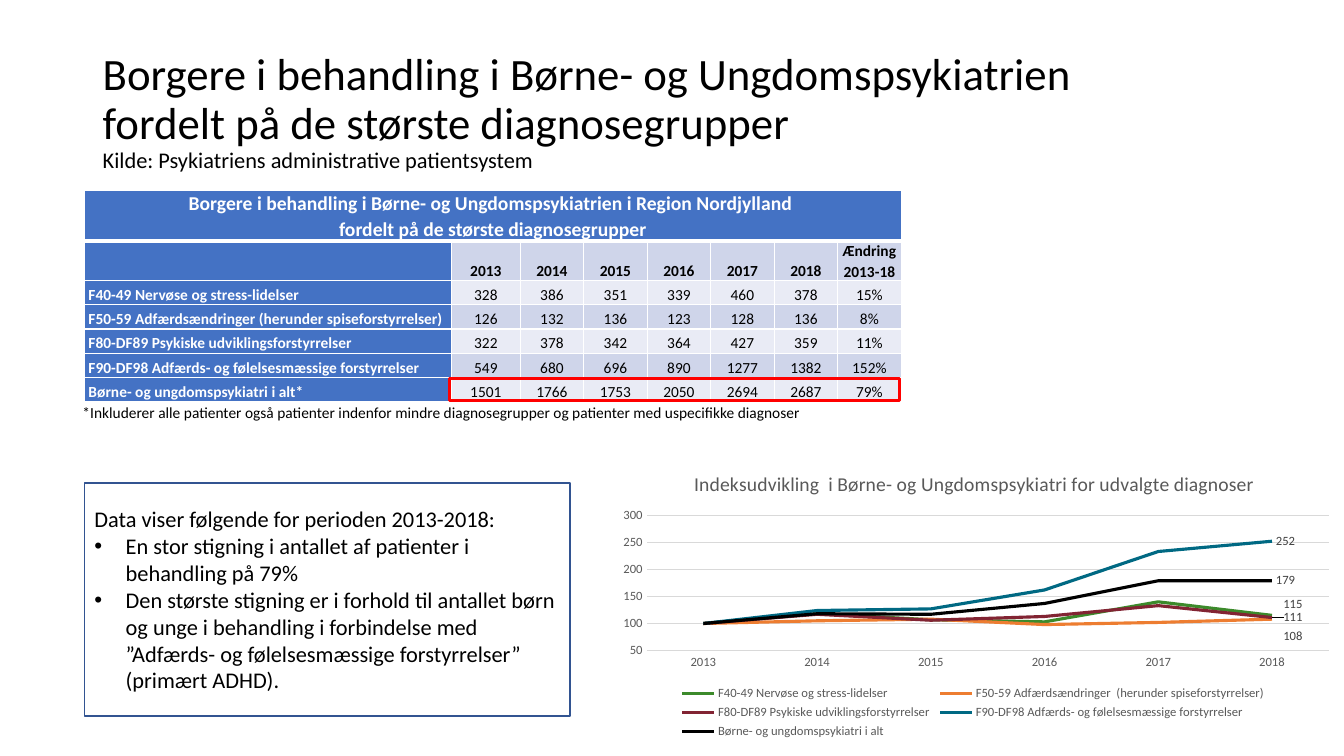
import lxml.etree
import pptx
import pptx.chart.data
import pptx.dml.color
import pptx.enum.chart
import pptx.enum.shapes
import pptx.enum.text
import pptx.oxml.ns
import pptx.util

Cm, Pt, qn = pptx.util.Cm, pptx.util.Pt, pptx.oxml.ns.qn
ALIGN, ANCHOR = pptx.enum.text.PP_ALIGN, pptx.enum.text.MSO_ANCHOR
RECT = pptx.enum.shapes.MSO_SHAPE.RECTANGLE

COLORS = {
    "black": "000000", "white": "FFFFFF", "blue": "4472C4", "frame": "325491",
    "band_dark": "CFD5EA", "band_light": "E9EBF5", "mark": "FF0000",
    "grid": "D9D9D9", "axis": "595959", "label": "404040",
}
FONT = "Calibri"

TITLE = ["Borgere i behandling i Børne- og Ungdomspsykiatrien ",
         "fordelt på de største diagnosegrupper"]
SOURCE = "Kilde: Psykiatriens administrative patientsystem"
TABLE_TITLE = ["Borgere i behandling i Børne- og Ungdomspsykiatrien i Region Nordjylland ",
               "fordelt på de største diagnosegrupper"]
YEARS = ["2013", "2014", "2015", "2016", "2017", "2018"]
CHANGE = ["Ændring ", "2013-18"]
# table label, chart label, patients per year, change, line colour, end label shift (x, y)
DIAGNOSES = [
    ("F40-49 Nervøse og stress-lidelser", "F40-49 Nervøse og stress-lidelser",
     [328, 386, 351, 339, 460, 378], "15%", "3C8A2B", (0.01, -0.04)),
    ("F50-59 Adfærdsændringer (herunder spiseforstyrrelser)",
     "F50-59 Adfærdsændringer  (herunder spiseforstyrrelser)",
     [126, 132, 136, 123, 128, 136], "8%", "ED7D31", (0.01, 0.06)),
    ("F80-DF89 Psykiske udviklingsforstyrrelser", "F80-DF89 Psykiske udviklingsforstyrrelser",
     [322, 378, 342, 364, 427, 359], "11%", "822433", (0.01, 0)),
    ("F90-DF98 Adfærds- og følelsesmæssige forstyrrelser",
     "F90-DF98 Adfærds- og følelsesmæssige forstyrrelser",
     [549, 680, 696, 890, 1277, 1382], "152%", "006983", None),
    ("Børne- og ungdomspsykiatri i alt*", "Børne- og ungdomspsykiatri i alt",
     [1501, 1766, 1753, 2050, 2694, 2687], "79%", "000000", None),
]
NOTE = ("*Inkluderer alle patienter også patienter indenfor mindre diagnosegrupper "
        "og patienter med uspecifikke diagnoser")
CHART_TITLE = "Indeksudvikling  i Børne- og Ungdomspsykiatri for udvalgte diagnoser "
FINDINGS = "Data viser følgende for perioden 2013-2018:"
BULLETS = [
    "En stor stigning i antallet af patienter i behandling på 79%",
    "Den største stigning er i forhold til antallet børn og unge i behandling i forbindelse "
    "med ”Adfærds- og følelsesmæssige forstyrrelser” (primært ADHD).",
]

COLS = [9.25, 1.73] + [1.6] * 6
ROWS = [1.27, 1.0] + [0.61] * len(DIAGNOSES)
TABLE_LEFT, TABLE_TOP = 2.13, 4.8


def rgb(name):
    return pptx.dml.color.RGBColor.from_string(COLORS.get(name, name))


def cm(*lengths):
    return [Cm(n) for n in lengths]


def set_all(obj, **values):
    for name, value in values.items():
        setattr(obj, name, value)


def style(font, size, color="black", bold=False):
    set_all(font, name=FONT, size=Pt(size), bold=bold)
    font.color.rgb = rgb(color)


def add_run(p, text, size, color="black", bold=False):
    r = p.add_run()
    r.text = text
    style(r.font, size, color, bold)


def set_line(line, color, width):
    line.color.rgb = rgb(color)
    line.width = Pt(width)


def add_text_box(slide, *box):
    tf = slide.shapes.add_textbox(*cm(*box)).text_frame
    set_all(tf, word_wrap=True, vertical_anchor=ANCHOR.MIDDLE)
    return tf


def add_frame(slide, box, color, width):
    sp = slide.shapes.add_shape(RECT, *cm(*box))
    sp.shadow.inherit = False
    sp.fill.background()
    set_line(sp.line, color, width)
    return sp


def fill_cell(cell, lines, fill, size=11, color="black", bold=False,
              align=ALIGN.CENTER, top=1, bottom=1):
    set_all(cell, vertical_anchor=ANCHOR.BOTTOM, margin_left=Cm(0.1),
            margin_right=Cm(0.1), margin_top=0, margin_bottom=0)
    tc_pr = cell._tc.get_or_add_tcPr()
    for side, width in zip("LRTB", (1, 1, top, bottom)):
        ln = lxml.etree.SubElement(tc_pr, qn("a:ln" + side), w=str(Pt(width)))
        solid = lxml.etree.SubElement(ln, qn("a:solidFill"))
        lxml.etree.SubElement(solid, qn("a:srgbClr"), val=COLORS["white"])
    cell.fill.solid()
    cell.fill.fore_color.rgb = rgb(fill)
    tf = cell.text_frame
    for i, text in enumerate(lines):
        p = tf.add_paragraph() if i else tf.paragraphs[0]
        set_all(p, alignment=align, line_spacing=1.07)
        add_run(p, text, size, color, bold)


def set_layout(parent, index, **values):
    """Place a chart part by fractions of the chart area."""
    for old in parent.findall(qn("c:layout")):
        parent.remove(old)
    layout = lxml.etree.Element(qn("c:layout"))
    manual = lxml.etree.SubElement(layout, qn("c:manualLayout"))
    for tag, value in values.items():
        lxml.etree.SubElement(manual, qn("c:" + tag), val=str(value))
    parent.insert(index, layout)


def add_table(slide):
    table = slide.shapes.add_table(len(ROWS), len(COLS), *cm(
        TABLE_LEFT, TABLE_TOP, sum(COLS), sum(ROWS))).table
    for col, width in zip(table.columns, COLS):
        col.width = Cm(width)
    for row, height in zip(table.rows, ROWS):
        row.height = Cm(height)
    table.cell(0, 0).merge(table.cell(0, len(COLS) - 1))
    fill_cell(table.cell(0, 0), TABLE_TITLE, "blue", 14, "white", True, bottom=3)
    for c, lines in enumerate([[]] + [[year] for year in YEARS] + [CHANGE]):
        fill_cell(table.cell(1, c), lines, "band_dark" if c else "blue", bold=True, top=3)
    for r, (label, _, counts, change, *_) in enumerate(DIAGNOSES, 2):
        fill_cell(table.cell(r, 0), [label], "blue", color="white", bold=True, align=ALIGN.LEFT)
        band = "band_dark" if r % 2 else "band_light"
        for c, value in enumerate(counts + [change], 1):
            fill_cell(table.cell(r, c), [str(value)], band)


def add_index_chart(slide):
    """Line chart of patients per year, with the first year as 100."""
    data = pptx.chart.data.CategoryChartData()
    data.categories = YEARS
    for _, name, counts, *_ in DIAGNOSES:
        data.add_series(name, [round(100 * n / counts[0]) for n in counts])
    chart = slide.shapes.add_chart(pptx.enum.chart.XL_CHART_TYPE.LINE,
                                   *cm(15.37, 11.46, 18.49, 7.26), data).chart
    style(chart.font, 10)
    add_run(chart.chart_title.text_frame.paragraphs[0], CHART_TITLE, 14, "axis")
    chart.has_legend = True
    set_all(chart.legend, position=pptx.enum.chart.XL_LEGEND_POSITION.BOTTOM,
            include_in_layout=False)
    style(chart.legend.font, 9, "axis")

    for axis in (chart.category_axis, chart.value_axis):
        axis.major_tick_mark = pptx.enum.chart.XL_TICK_MARK.NONE
        style(axis.tick_labels.font, 9, "axis")
    set_line(chart.category_axis.format.line, "grid", 0.75)
    values = chart.value_axis
    set_all(values, minimum_scale=50, maximum_scale=300, major_unit=50)
    values.format.line.fill.background()
    set_line(values.major_gridlines.format.line, "grid", 0.75)

    for series, (*_, color, shift) in zip(chart.plots[0].series, DIAGNOSES):
        series.smooth = False
        set_line(series.format.line, color, 2.25)
        label = series.points[len(YEARS) - 1].data_label
        label.position = pptx.enum.chart.XL_LABEL_POSITION.RIGHT
        style(label.font, 9, "label")
        series.data_labels.show_value = False
        if shift:
            set_layout(series._element.xpath("c:dLbls/c:dLbl")[0], 1, x=shift[0], y=shift[1])
            for leader in series._element.xpath("c:dLbls/c:showLeaderLines"):
                leader.set("val", "0" if shift[1] else "1")

    edge = {"xMode": "edge", "yMode": "edge"}
    set_layout(chart.chart_title._element, 1, **edge, x=0.11, y=0.04)
    set_layout(chart._chartSpace.chart.plotArea, 0, layoutTarget="inner", **edge,
               x=0.05, y=0.21, w=0.93, h=0.47)
    set_layout(chart.legend._element, 1, **edge, x=0.09, y=0.79, w=0.81, h=0.21)


def add_findings(slide):
    tf = add_frame(slide, (TABLE_LEFT, 12.17, 12.24, 5.87), "frame", 1).text_frame
    set_all(tf, word_wrap=True, vertical_anchor=ANCHOR.MIDDLE)
    for i, text in enumerate([FINDINGS] + BULLETS):
        p = tf.add_paragraph() if i else tf.paragraphs[0]
        p.alignment = ALIGN.LEFT
        add_run(p, text, 16)
        if i:
            p_pr = p._p.get_or_add_pPr()
            p_pr.set("marL", str(Cm(0.79)))
            p_pr.set("indent", str(-Cm(0.79)))
            lxml.etree.SubElement(p_pr, qn("a:buFont"), typeface="Arial")
            lxml.etree.SubElement(p_pr, qn("a:buChar"), char="•")


def main():
    prs = pptx.Presentation()
    set_all(prs, slide_width=Cm(33.87), slide_height=Cm(19.05))
    slide = prs.slides.add_slide(prs.slide_layouts[6])

    p = add_text_box(slide, 2.34, 1.0, 29.21, 3.68).paragraphs[0]
    p.line_spacing = 0.9
    for line in TITLE:
        add_run(p, line, 32)
        p.add_line_break()
    add_run(p, SOURCE, 16)

    add_table(slide)
    add_index_chart(slide)
    add_findings(slide)
    add_run(add_text_box(slide, 1.83, 10.11, 20.14, 0.56).paragraphs[0], NOTE, 11)
    add_frame(slide, (11.33, 9.53, 11.33, 0.56), "mark", 2.25)
    prs.save("out.pptx")


if __name__ == "__main__":
    main()
